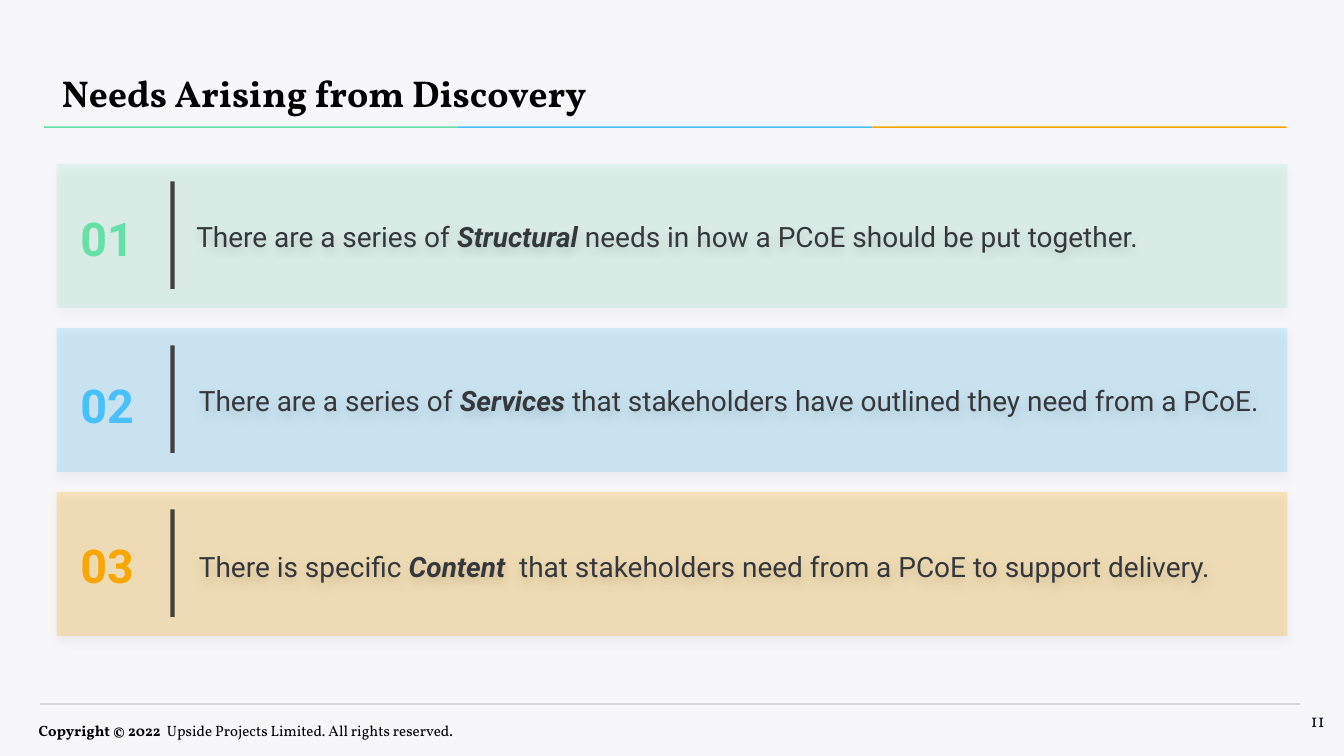
"""Build the slide on needs arising from discovery."""
from lxml.etree import SubElement
from pptx import Presentation
from pptx.dml.color import RGBColor as Rgb
from pptx.enum.shapes import MSO_CONNECTOR as Link, MSO_SHAPE as Kind
from pptx.enum.text import MSO_ANCHOR as Anchor, PP_ALIGN as Align
from pptx.oxml.ns import qn
from pptx.util import Cm, Pt

HUES = {
    "back": "F7F7F9", "green": "66DFA9", "blue": "49C0F9", "gold": "F8A700",
    "body": "35383A", "bar": "414141", "rule": "D4D8D8", "black": "000000",
    "page": "151E28",
}
TITLE = "Needs Arising from Discovery"
NEEDS = [
    dict(num="01", hue="green", alpha=16, inset=2.64, top=3.48, gap=1.0,
         text=("There are a series of ", "Structural ",
               "needs in how a PCoE should be put together.")),
    dict(num="02", hue="blue", alpha=22, inset=2.69, top=6.63, gap=1.0,
         text=("There are a series of ", "Services ",
               "that stakeholders have outlined they need from a PCoE.")),
    dict(num="03", hue="gold", alpha=24, inset=2.69, top=9.66, gap=1.15,
         text=("There is specific ", "Content  ",
               "that stakeholders need from a PCoE to support delivery.")),
]
NOTE = ("Copyright © 2022  ", "Upside Projects Limited. All rights reserved.")
PAGE = "11"

LEFT, TOP, WIDE, HIGH, STEP = 1.07, 3.1, 23.26, 2.72, 3.1
STRIP = 7.83


def color(name):
    return Rgb.from_string(HUES[name])


def pad(frame, sides):
    frame.margin_left, frame.margin_top, frame.margin_right, frame.margin_bottom = map(Cm, sides)
    frame.word_wrap = True


def style(para, face, size, hue, bold=None):
    font = para.font
    font.name, font.size, font.bold = face, Pt(size), bold
    font.color.rgb = color(hue)


def label(slide, box, text, face, size, hue, bold=None, sides=(0.25,) * 4):
    frame = slide.shapes.add_textbox(*map(Cm, box)).text_frame
    pad(frame, sides)
    para = frame.paragraphs[0]
    for part in text:
        para.add_run().text = part
    style(para, face, size, hue, bold)
    return frame


def block(slide, box, hue):
    shape = slide.shapes.add_shape(Kind.RECTANGLE, *map(Cm, box))
    shape.fill.solid()
    shape.fill.fore_color.rgb = color(hue)
    shape.line.fill.background()
    shape.shadow.inherit = False
    return shape


def fade(node, share):
    SubElement(node, qn("a:alpha"), val=str(share * 1000))


def cast(shape):
    base = shape._element.spPr.find(qn("a:effectLst"))
    shade = SubElement(base, qn("a:outerShdw"), blurRad=str(Pt(5.6)),
                       dist=str(Pt(2.2)), dir="5400000", algn="t", rotWithShape="0")
    fade(SubElement(shade, qn("a:srgbClr"), val=HUES["black"]), 20)


def card(slide, top, need):
    shape = block(slide, (LEFT, top, WIDE, HIGH), need["hue"])
    fade(shape._element.spPr.find(qn("a:solidFill"))[0], need["alpha"])
    cast(shape)
    frame = shape.text_frame
    pad(frame, (need["inset"], 0.25, 0.25, 0.25))
    frame.vertical_anchor = Anchor.MIDDLE
    para = frame.paragraphs[0]
    para.alignment = Align.LEFT
    para.line_spacing = need["gap"]
    style(para, "Roboto", 15, "body")
    for part in need["text"]:
        run = para.add_run()
        run.text = part
        if part == need["text"][1]:
            run.font.bold = run.font.italic = True
    num = label(slide, (1.27, need["top"], 1.8, 2.05), [need["num"]],
                "Roboto", 25, need["hue"], True)
    num.vertical_anchor = Anchor.MIDDLE
    block(slide, (3.22, top + 0.33, 0.08, 2.03), "bar")


def foot(slide):
    rule = slide.shapes.add_connector(Link.STRAIGHT, Cm(0.76), Cm(13.31), Cm(24.56), Cm(13.31))
    rule.line.color.rgb = color("rule")
    rule.line.width = Pt(0.75)
    SubElement(rule._element.spPr, qn("a:effectLst"))
    note = label(slide, (0.48, 13.44, 15.3, 0.61), NOTE, "Vollkorn", 8, "black",
                 sides=(0.25, 0.13, 0.25, 0.13))
    para = note.paragraphs[0]
    para.line_spacing = 1.2
    para.runs[0].font.bold = True
    page = label(slide, (23.77, 13.18, 1.52, 1.09), [PAGE], "Vollkorn", 10, "page")
    page.paragraphs[0].alignment = Align.RIGHT


def main():
    deck = Presentation()
    deck.slide_width, deck.slide_height = Cm(25.4), Cm(14.29)
    slide = deck.slides.add_slide(deck.slide_layouts[6])
    slide.background.fill.solid()
    slide.background.fill.fore_color.rgb = color("back")
    foot(slide)
    label(slide, (1.07, 1.22, 18.24, 0.97), [TITLE], "Vollkorn", 20, "black", True, (0.1,) * 4)
    for i, need in enumerate(NEEDS):
        block(slide, (0.83 + i * STRIP, 2.39, STRIP, 0.03), need["hue"])
        card(slide, TOP + i * STEP, need)
    deck.save("out.pptx")


if __name__ == "__main__":
    main()
